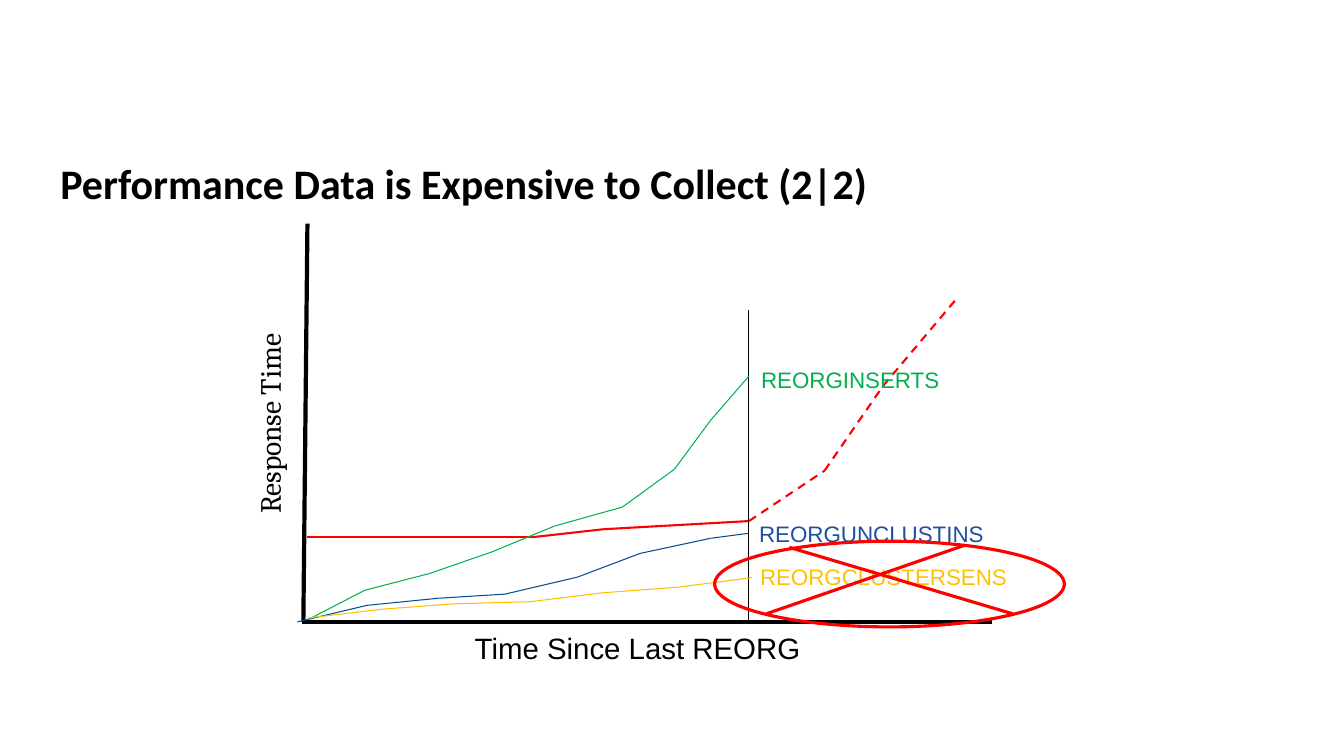
from dataclasses import dataclass
from itertools import pairwise

from lxml.etree import SubElement
from pptx import Presentation
from pptx.dml.color import RGBColor
from pptx.enum.dml import MSO_LINE
from pptx.enum.shapes import MSO_CONNECTOR, MSO_SHAPE
from pptx.enum.text import MSO_ANCHOR, PP_ALIGN
from pptx.oxml.ns import qn
from pptx.util import Pt


@dataclass(frozen=True)
class Theme:
    black: str = "000000"
    red: str = "FF0000"
    blue: str = "004C93"
    label_blue: str = "1F4F9E"
    green: str = "00B050"
    yellow: str = "FFC000"
    title_size: int = 30
    axis_size: int = 21
    label_size: int = 16
    thin: float = 0.75
    medium: float = 1.5
    mark: float = 2.25
    axis: float = 3


theme = Theme()
deck = Presentation()
deck.slide_width, deck.slide_height = Pt(960), Pt(540)
page = deck.slides.add_slide(deck.slide_layouts[6])


def add_path(points, color, width, dash=None):
    """Join neighbouring points with straight connectors."""
    for start, end in pairwise(points):
        ends = [Pt(value) for value in (*start, *end)]
        segment = page.shapes.add_connector(MSO_CONNECTOR.STRAIGHT, *ends)
        segment.line.color.rgb = RGBColor.from_string(color)
        segment.line.width = Pt(width)
        if dash:
            segment.line.dash_style = dash
        SubElement(segment._element.spPr, qn("a:effectLst"))


def add_label(text, frame, font, size, color, align=PP_ALIGN.CENTER):
    box = page.shapes.add_textbox(*[Pt(value) for value in frame])
    box.text_frame.word_wrap = True
    para = box.text_frame.paragraphs[0]
    para.text = text
    para.alignment = align
    span = para.runs[0]
    span.font.name = font
    span.font.size = Pt(size)
    span.font.color.rgb = RGBColor.from_string(color)
    return box


# Title
title = add_label("Performance Data is Expensive to Collect (2|2)", (36, 101.5, 771.8, 62.6),
                  "Calibri", theme.title_size, theme.black, PP_ALIGN.LEFT)
title.text_frame.vertical_anchor = MSO_ANCHOR.MIDDLE
title.text_frame.paragraphs[0].line_spacing = 0.9
title.text_frame.paragraphs[0].runs[0].font.bold = True

# Axes
baseline = 444.2
reorg_x = 535
add_path([(219.6, 159.8), (216.7, baseline)], theme.black, theme.axis)
add_path([(708.5, baseline), (216, baseline)], theme.black, theme.axis)
response_time = add_label("Response Time", (101.5, 285.8, 182.9, 33.8),
                          "Cambria", theme.axis_size, theme.black)
response_time.rotation = 270
add_label("Time Since Last REORG", (321.8, 446.4, 267.1, 33.8),
          "Arial", theme.axis_size, theme.black)

# Response time, measured and then projected past the reorganisation
add_path([(219.6, 383.8), (379.5, 383.8), (431.3, 378), (reorg_x, 372.2)],
         theme.red, theme.medium)
add_path([(reorg_x, 372.2), (589, 336.2), (630.7, 275.8), (684.7, 211.7)],
         theme.red, theme.medium, MSO_LINE.DASH)
add_path([(reorg_x, baseline), (reorg_x, 221.8)], theme.black, theme.thin)

# Counters: name, label frame, label colour, curve colour, curve points
counters = [
    ("REORGUNCLUSTINS", (529.2, 367.9, 186.5, 27.4), theme.label_blue, theme.blue,
     [(212.4, baseline), (262.1, 432.4), (313.2, 427.3), (360.7, 424.4),
      (412.6, 412.2), (457.2, 395.3), (507.6, 384.5), (reorg_x, 380.9)]),
    ("REORGINSERTS", (514.1, 257.8, 186.5, 27.4), theme.green, theme.green,
     [(219.6, 442.8), (260.6, 421.6), (306.7, 409.7), (351.4, 394.2), (396, 375.8),
      (444.6, 362.2), (481.7, 335.2), (507.6, 300.2), (reorg_x, 268.6)]),
    ("REORGCLUSTERSENS", (528.5, 398.9, 205.2, 27.4), theme.yellow, theme.yellow,
     [(220.3, 441.4), (272.5, 435.2), (324.7, 431.3), (378.7, 429.8),
      (430.9, 423.4), (484.6, 419.4), (537.1, 412.6)]),
]
for name, frame, label_color, curve_color, points in counters:
    add_path(points, curve_color, theme.thin)
    add_label(name, frame, "Arial", theme.label_size, label_color)

# Crossed-out counter
ring = page.shapes.add_shape(MSO_SHAPE.OVAL, Pt(510.5), Pt(386.6), Pt(249.8), Pt(61.2))
ring.shadow.inherit = False
ring.fill.background()
ring.line.color.rgb = RGBColor.from_string(theme.red)
ring.line.width = Pt(theme.mark)
add_path([(563.8, 391), (723.6, 438.5)], theme.red, theme.mark)
add_path([(547.2, 438.5), (689, 389.5)], theme.red, theme.mark)

deck.save("out.pptx")
